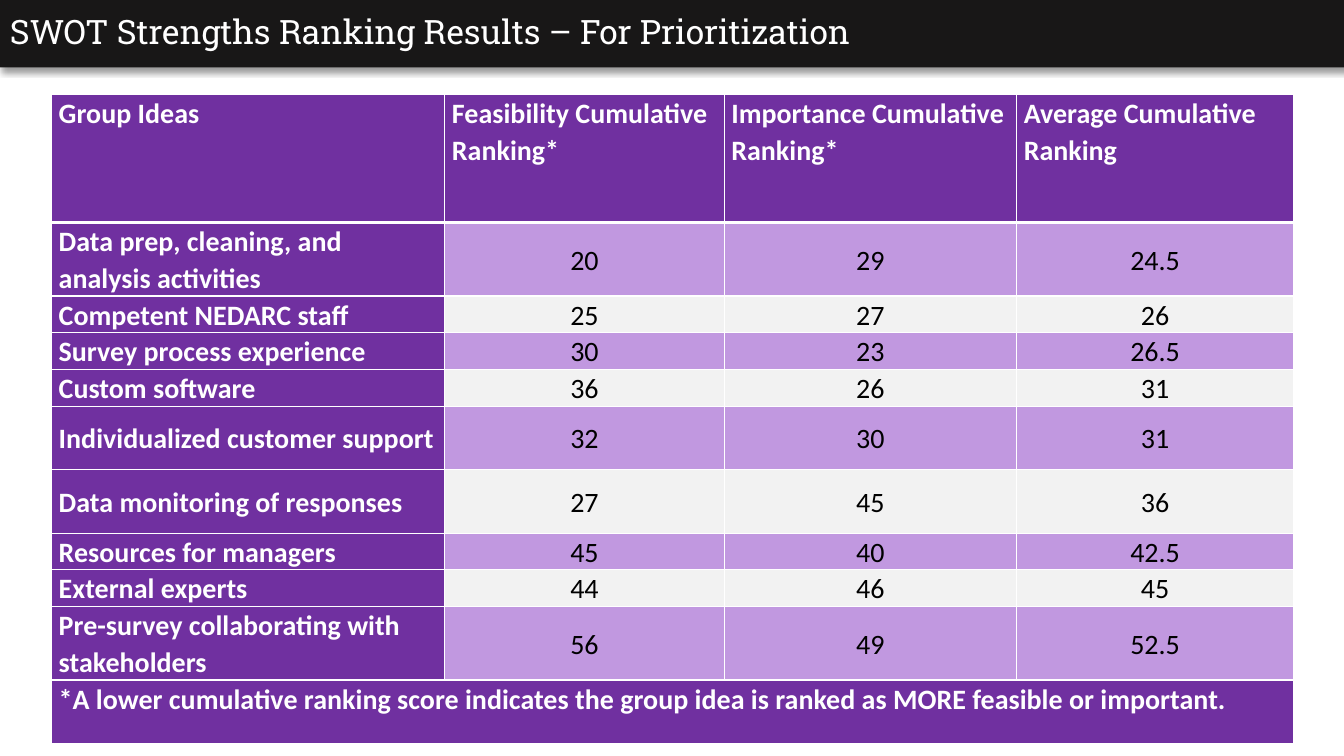
import dataclasses

import lxml.etree
import pptx
import pptx.dml.color
import pptx.enum.shapes
import pptx.enum.text
import pptx.oxml.ns
import pptx.util

Cm = pptx.util.Cm
Pt = pptx.util.Pt
ANCHOR = pptx.enum.text.MSO_ANCHOR
ALIGN = pptx.enum.text.PP_ALIGN


@dataclasses.dataclass(frozen=True)
class Theme:
    banner: str = "181717"
    purple: str = "7030A0"
    bands: tuple = ("C198E0", "F2F2F2")
    light: str = "FFFFFF"
    dark: str = "000000"
    title_font: str = "Roboto Slab"
    body_font: str = "Calibri"
    title_size: int = 24
    body_size: int = 20
    line_spacing: float = 1.07
    rule: int = 1
    heavy_rule: int = 3


def add_element(parent, tag, **attributes):
    element = lxml.etree.SubElement(parent, pptx.oxml.ns.qn(tag))
    for name, value in attributes.items():
        element.set(name, str(value))
    return element


class SlideBuilder:
    def __init__(self, slide, theme):
        self.slide = slide
        self.theme = theme

    def fill(self, item, color):
        item.fill.solid()
        item.fill.fore_color.rgb = pptx.dml.color.RGBColor.from_string(color)

    def set_text(self, frame, text, font, size, color, bold=False, align=ALIGN.LEFT):
        frame.text = text
        para = frame.paragraphs[0]
        para.alignment = align
        span = para.runs[0].font
        span.name, span.size, span.bold = font, Pt(size), bold
        span.color.rgb = pptx.dml.color.RGBColor.from_string(color)

    def banner(self, text, left, top, width, height):
        box = self.slide.shapes.add_shape(
            pptx.enum.shapes.MSO_SHAPE.RECTANGLE, Cm(left), Cm(top), Cm(width), Cm(height))
        self.fill(box, self.theme.banner)
        box.line.fill.background()
        self.cast_shadow(box)
        box.text_frame.word_wrap = True
        box.text_frame.vertical_anchor = ANCHOR.MIDDLE
        self.set_text(box.text_frame, text, self.theme.title_font,
                      self.theme.title_size, self.theme.light)

    def cast_shadow(self, box):
        """Drop a soft shadow straight down."""
        box.shadow.inherit = False
        effects = box.element.spPr.find(pptx.oxml.ns.qn("a:effectLst"))
        shadow = add_element(effects, "a:outerShdw", blurRad=Pt(4), dist=Pt(3),
                             dir=90 * 60000, algn="t", rotWithShape=0)
        color = add_element(shadow, "a:srgbClr", val=self.theme.dark)
        add_element(color, "a:alpha", val=40000)

    def table(self, left, top, widths, heights):
        frame = self.slide.shapes.add_table(
            len(heights), len(widths), Cm(left), Cm(top), Cm(sum(widths)), Cm(sum(heights)))
        table = frame.table
        for column, width in zip(table.columns, widths):
            column.width = Cm(width)
        for row, height in zip(table.rows, heights):
            row.height = Cm(height)
        return table

    def borders(self, cell, top, bottom):
        properties = cell._tc.get_or_add_tcPr()
        rule = self.theme.rule
        for side, width in (("L", rule), ("R", rule), ("T", top), ("B", bottom)):
            line = add_element(properties, f"a:ln{side}", w=Pt(width))
            add_element(add_element(line, "a:solidFill"), "a:srgbClr", val=self.theme.light)

    def cell(self, cell, text, fill, color, bold, align, anchor, top, bottom):
        self.borders(cell, top, bottom)
        self.fill(cell, fill)
        cell.margin_left = cell.margin_right = Cm(0.18)
        cell.margin_top = cell.margin_bottom = 0
        cell.vertical_anchor = anchor
        if text:
            self.set_text(cell.text_frame, text, self.theme.body_font,
                          self.theme.body_size, color, bold, align)
            cell.text_frame.paragraphs[0].line_spacing = self.theme.line_spacing

    def ranking_table(self, table, headings, rankings, footnote):
        theme = self.theme
        last = len(rankings) + 1
        table.cell(last, 0).merge(table.cell(last, len(headings) - 1))
        rows = [headings, *rankings, (footnote, "", "", "")]
        for r, texts in enumerate(rows):
            outer = r in (0, last)
            for c, text in enumerate(texts):
                label = outer or c == 0
                self.cell(
                    table.cell(r, c), text,
                    fill=theme.purple if label else theme.bands[(r - 1) % 2],
                    color=theme.light if label else theme.dark,
                    bold=label,
                    align=ALIGN.LEFT if label else ALIGN.CENTER,
                    anchor=ANCHOR.TOP if outer else ANCHOR.MIDDLE,
                    top=theme.heavy_rule if r == 1 else theme.rule,
                    bottom=theme.heavy_rule if r == 0 else theme.rule)


HEADINGS = ("Group Ideas", "Feasibility Cumulative Ranking*",
            "Importance Cumulative Ranking*", "Average Cumulative Ranking")
RANKINGS = (
    ("Data prep, cleaning, and analysis activities", "20", "29", "24.5"),
    ("Competent NEDARC staff", "25", "27", "26"),
    ("Survey process experience", "30", "23", "26.5"),
    ("Custom software", "36", "26", "31"),
    ("Individualized customer support", "32", "30", "31"),
    ("Data monitoring of responses", "27", "45", "36"),
    ("Resources for managers", "45", "40", "42.5"),
    ("External experts", "44", "46", "45"),
    ("Pre-survey collaborating with stakeholders", "56", "49", "52.5"),
)
FOOTNOTE = ("*A lower cumulative ranking score indicates the group idea "
            "is ranked as MORE feasible or important.")
COLUMN_WIDTHS = (9.91, 7.04, 7.37, 6.98)
HEADER, TALL, SHORT = 3.23, 1.6, 0.79
ROW_HEIGHTS = (HEADER, TALL, SHORT, SHORT, SHORT, TALL, TALL, SHORT, SHORT, TALL, TALL)


def main():
    deck = pptx.Presentation()
    deck.slide_width, deck.slide_height = Cm(33.87), Cm(19.05)
    page = SlideBuilder(deck.slides.add_slide(deck.slide_layouts[6]), Theme())
    page.banner("SWOT Strengths Ranking Results – For Prioritization", 0, -0.15, 34.09, 1.85)
    table = page.table(1.3, 2.38, COLUMN_WIDTHS, ROW_HEIGHTS)
    page.ranking_table(table, HEADINGS, RANKINGS, FOOTNOTE)
    deck.save("out.pptx")


if __name__ == "__main__":
    main()
